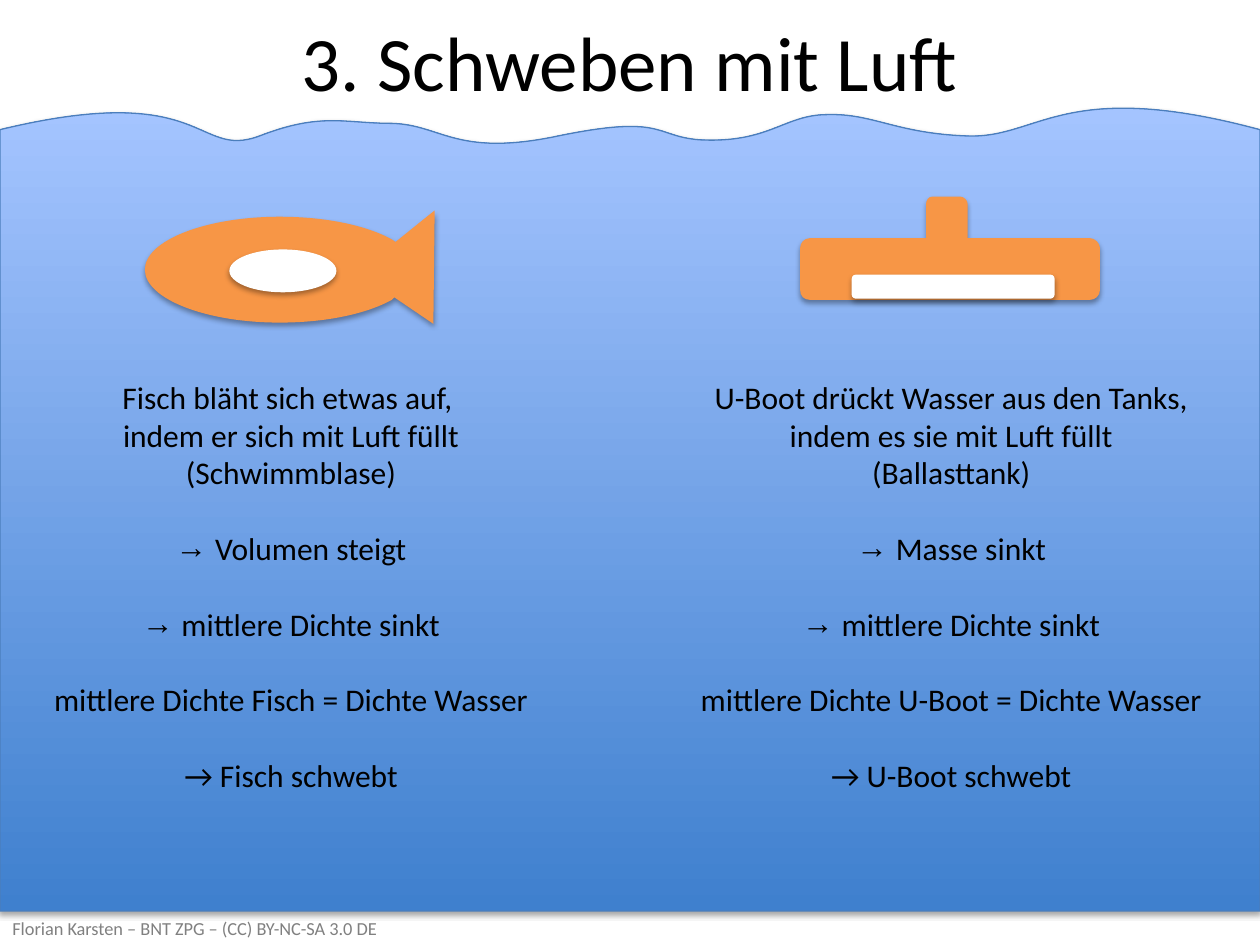
from lxml import etree
from pptx import Presentation, util as u
from pptx.dml.color import RGBColor
from pptx.enum import shapes, text
from pptx.oxml.ns import qn

BLACK = RGBColor(0, 0, 0)
WHITE = RGBColor(255, 255, 255)
GREY = RGBColor(0x80, 0x80, 0x80)
ORANGE = RGBColor(0xF7, 0x96, 0x46)
DEEP_WATER = RGBColor(0x3F, 0x80, 0xCE)
SURFACE_WATER = RGBColor(0xA4, 0xC4, 0xFF)
WAVE_LINE = RGBColor(0x4B, 0x7E, 0xBC)

WIDTH, HEIGHT = 10, 7.5
SEA_FLOOR = 7.23
LINE_GAP = 21.6  # one line of 18 point text
UNITS = 1000  # path units to the inch

TITLE = "3. Schweben mit Luft"
CREDIT = "Florian Karsten – BNT ZPG – (CC) BY-NC-SA 3.0 DE"

# Each column: box (left, top, width, height), opening lines, first step, object
COLUMNS = [
    ((0.3, 2.95, 4.02, 3.43),
     ["Fisch bläht sich etwas auf, ", "indem er sich mit Luft füllt", "(Schwimmblase)"],
     "Volumen steigt", "Fisch"),
    ((5.43, 2.95, 4.24, 3.43),
     ["U-Boot drückt Wasser aus den Tanks,\vindem es sie mit Luft füllt", "(Ballasttank)"],
     "Masse sinkt", "U-Boot"),
]

# Outlines in inches: pairs are corners, sixes are cubic curves
WATER_BOX = (0, 0.86, WIDTH, 6.37)
WATER = [
    (0, 1.03), (1.65, 0.63, 1.55, 1.27, 2.06, 1.08), (2.55, 0.89, 2.73, 0.98, 3.11, 0.98),
    (3.5, 0.99, 3.61, 1.24, 4.38, 1.09), (5.28, 0.9, 5.18, 1.08, 5.55, 1.11),
    (6.11, 1.14, 6.22, 0.91, 6.57, 0.91), (6.93, 0.9, 7.11, 1.06, 7.68, 1.08),
    (8.25, 1.1, 8.44, 0.61, WIDTH, 1.03), (WIDTH, SEA_FLOOR), (0, SEA_FLOOR), (0, 1.03),
]
FISH_BOX = (1.15, 1.67, 2.3, 0.89)
FISH = [
    (3.45, 1.67), (3.44, 2.57), (3.13, 2.36), (3.11, 2.38),
    (2.91, 2.49, 2.59, 2.56, 2.22, 2.56), (1.63, 2.56, 1.15, 2.37, 1.15, 2.14),
    (1.15, 1.91, 1.63, 1.72, 2.22, 1.72), (2.59, 1.72, 2.91, 1.79, 3.11, 1.9), (3.14, 1.92),
]
SUBMARINE_BOX = (6.35, 1.56, 2.38, 0.82)
SUBMARINE = [
    (7.4, 1.56), (7.62, 1.56), (7.65, 1.56, 7.68, 1.59, 7.68, 1.62), (7.68, 1.89),
    (8.65, 1.89), (8.69, 1.89, 8.73, 1.93, 8.73, 1.97), (8.73, 2.3),
    (8.73, 2.35, 8.69, 2.38, 8.65, 2.38), (6.43, 2.38), (6.38, 2.38, 6.35, 2.35, 6.35, 2.3),
    (6.35, 1.97), (6.35, 1.93, 6.38, 1.89, 6.43, 1.89), (7.35, 1.89), (7.35, 1.62),
    (7.35, 1.59, 7.37, 1.56, 7.4, 1.56),
]
AIR_CHAMBERS = [
    (shapes.MSO_SHAPE.ROUNDED_RECTANGLE, (6.76, 2.18, 1.61, 0.19)),
    (shapes.MSO_SHAPE.OVAL, (1.82, 1.98, 0.85, 0.34)),
]


def inches(box):
    return [u.Inches(length) for length in box]


def add_outline(page, box, outline):
    """Build a freeform that spans the box, then give its path corners and curves."""
    left, top, width, height = (length * UNITS for length in box)
    builder = page.shapes.build_freeform(left, top, scale=u.Inches(1) / UNITS)
    builder.add_line_segments([(left + width, top), (left + width, top + height)])
    shape = builder.convert_to_shape()

    path = next(shape.element.iter(qn("a:path")))
    for step in list(path):
        path.remove(step)
    for index, part in enumerate(outline):
        kind = "a:moveTo" if index == 0 else "a:lnTo" if len(part) == 2 else "a:cubicBezTo"
        step = etree.SubElement(path, qn(kind))
        for x, y in zip(part[::2], part[1::2]):
            etree.SubElement(step, qn("a:pt"), x=str(round(x * UNITS - left)),
                             y=str(round(y * UNITS - top)))
    etree.SubElement(path, qn("a:close"))
    return shape


def paint(shape, color=None):
    """Fill the shape, if a colour is given, without a line; add a soft shadow below."""
    if color is not None:
        shape.fill.solid()
        shape.fill.fore_color.rgb = color
        shape.line.fill.background()
    shape.shadow.inherit = False
    effects = shape.element.spPr.find(qn("a:effectLst"))
    shadow = etree.SubElement(effects, qn("a:outerShdw"), blurRad="40000", dist="23000",
                              dir="5400000", rotWithShape="0")
    shade = etree.SubElement(shadow, qn("a:srgbClr"), val="000000")
    etree.SubElement(shade, qn("a:alpha"), val="35000")


def write(para, words, size=18, color=BLACK, align=text.PP_ALIGN.CENTER, gap=0, bullet=None):
    para.text = words
    para.alignment = align
    para.space_before = u.Pt(gap)
    for span in para.runs:
        span.font.size = u.Pt(size)
        span.font.name = "Calibri"
        span.font.color.rgb = color
    if bullet:
        props = para._p.get_or_add_pPr()
        props.set("marL", "285750")
        props.set("indent", "-285750")
        etree.SubElement(props, qn("a:buFont"), typeface="Arial")
        etree.SubElement(props, qn("a:buChar"), char=bullet)


def add_column(page, box, opening, first_step, thing):
    frame = page.shapes.add_textbox(*inches(box)).text_frame
    frame.word_wrap = False
    lines = [(words, {}) for words in opening]
    lines += [(step, {"gap": LINE_GAP, "bullet": "→"})
              for step in (first_step, "mittlere Dichte sinkt")]
    lines += [(words, {"gap": LINE_GAP})
              for words in (f"mittlere Dichte {thing} = Dichte Wasser", f"→ {thing} schwebt")]
    for index, (words, style) in enumerate(lines):
        para = frame.add_paragraph() if index else frame.paragraphs[0]
        write(para, words, **style)


def main():
    deck = Presentation()
    deck.slide_width, deck.slide_height = u.Inches(WIDTH), u.Inches(HEIGHT)
    page = deck.slides.add_slide(deck.slide_layouts[5])

    title = page.shapes.title
    title.left, title.top, title.width, title.height = inches((0, 0, WIDTH, 0.97))
    title.text_frame.vertical_anchor = text.MSO_ANCHOR.MIDDLE
    write(title.text_frame.paragraphs[0], TITLE, size=44)

    water = add_outline(page, WATER_BOX, WATER)
    water.fill.gradient()
    water.fill.gradient_angle = 90
    for stop, color in zip(water.fill.gradient_stops, (DEEP_WATER, SURFACE_WATER)):
        stop.color.rgb = color
    water.line.color.rgb = WAVE_LINE
    water.line.width = u.Pt(0.75)
    paint(water)
    title.element.addprevious(water.element)

    credit = page.shapes.add_textbox(*inches((0, SEA_FLOOR, 7.94, HEIGHT - SEA_FLOOR)))
    credit.text_frame.word_wrap = True
    credit.text_frame.vertical_anchor = text.MSO_ANCHOR.MIDDLE
    write(credit.text_frame.paragraphs[0], CREDIT, size=10.5, color=GREY,
          align=text.PP_ALIGN.LEFT)

    for box, outline in ((FISH_BOX, FISH), (SUBMARINE_BOX, SUBMARINE)):
        paint(add_outline(page, box, outline), ORANGE)
    for column in COLUMNS:
        add_column(page, *column)
    for kind, box in AIR_CHAMBERS:
        paint(page.shapes.add_shape(kind, *inches(box)), WHITE)

    deck.save("out.pptx")


if __name__ == "__main__":
    main()
